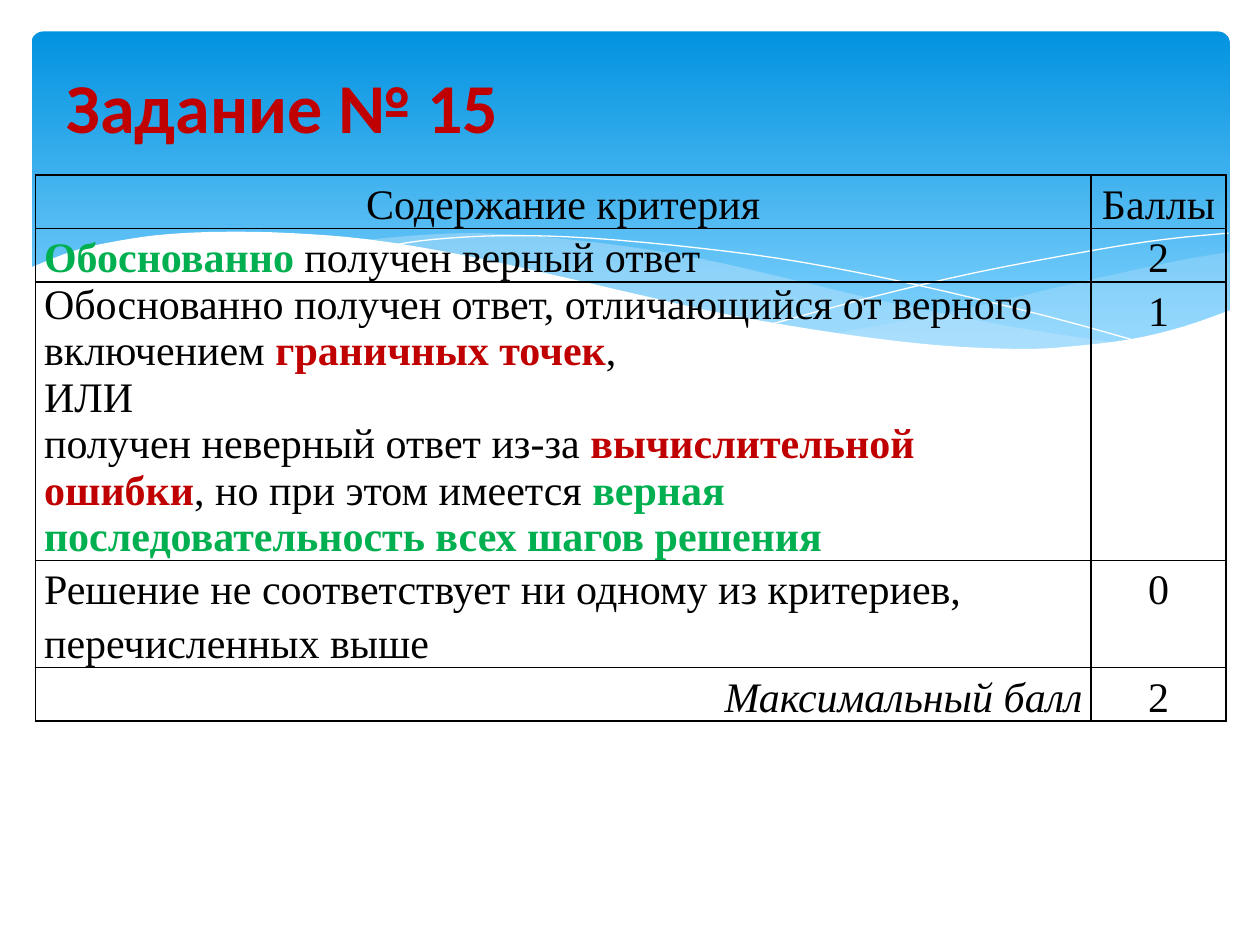
from lxml.etree import SubElement
from pptx import Presentation
from pptx.dml.color import RGBColor
from pptx.enum.shapes import MSO_SHAPE as Preset
from pptx.enum.text import MSO_ANCHOR as Anchor, PP_ALIGN as Align
from pptx.oxml.ns import qn
from pptx.util import Inches, Pt

WHITE = RGBColor(0xFF, 0xFF, 0xFF)
BLACK = RGBColor(0x00, 0x00, 0x00)
RED = RGBColor(0xC0, 0x00, 0x00)
GREEN = RGBColor(0x00, 0xB0, 0x50)
SKY_TOP = RGBColor(0x02, 0x93, 0xE0)
SKY_BOTTOM = RGBColor(0x83, 0xD3, 0xFE)
MIST = RGBColor(0xC6, 0xE7, 0xFC)

CELL = Inches(1)
COLUMNS, ROWS = 10, 7.5

PLAIN = {"size": Pt(24), "name": "Times New Roman", "bold": False, "italic": False}
RED_BOLD = {"color": RED, "bold": True}
GREEN_BOLD = {"color": GREEN, "bold": True}
ITALIC = {"italic": True}

RIGHT_VEIL = [
    [(9.76, 2), (9.35, 2.07), (8.61, 2.23), (7.53, 2.48), (6.61, 2.65)],
    [(6.61, 2.65), (7.19, 2.72), (7.69, 2.77), (8.14, 2.78), (8.63, 2.75),
     (9.05, 2.69), (9.42, 2.59), (9.76, 2.47)],
]
LONG_VEIL = [
    [(8.93, 2.73), (8.07, 2.6), (7.06, 2.4), (6.29, 2.22), (5.69, 2.08),
     (5.14, 1.98), (4.42, 1.89), (3.8, 1.85), (3.28, 1.87), (2.86, 1.91)],
    [(2.86, 1.91), (3.42, 1.99), (4.04, 2.11), (4.91, 2.32), (5.84, 2.52),
     (6.65, 2.66), (7.36, 2.75), (7.96, 2.78), (8.48, 2.77), (8.93, 2.73)],
]
FALLING_LINE = [
    [(3.09, 1.95), (3.44, 1.9), (4.01, 1.87), (4.69, 1.89), (5.56, 1.97),
     (6.36, 2.08), (7.27, 2.26), (8.31, 2.51), (9.07, 2.72)],
]
RISING_LINE = [
    [(6.13, 2.57), (6.95, 2.35), (7.76, 2.16), (8.66, 1.99), (9.24, 1.9), (9.75, 1.85)],
]
WHITE_WAVE = [
    [(9.77, 2.46), (9.4, 2.59), (8.99, 2.69), (8.5, 2.75), (8.09, 2.77),
     (7.44, 2.74), (6.68, 2.65), (5.79, 2.5), (5.03, 2.33), (4.47, 2.2),
     (3.65, 2.02), (2.92, 1.9), (2.3, 1.85), (1.77, 1.84), (1.32, 1.86),
     (0.95, 1.91), (0.59, 1.99), (0.23, 2.13)],
    [(0.23, 3.29), (9.77, 3.29)],
]

CRITERIA = [
    (0.42, 1.15, Align.CENTER, [[("Содержание критерия", {})]], "Баллы"),
    (0.42, 1.15, Align.LEFT,
     [[("Обоснованно", GREEN_BOLD), (" получен верный ответ", {})]], "2"),
    (2.21, 1, Align.LEFT,
     [[("Обоснованно получен ответ, отличающийся от верного включением ", {}),
       ("граничных точек", RED_BOLD), (",", {})],
      [("ИЛИ", {})],
      [("получен неверный ответ из-за ", {}), ("вычислительной ошибки", RED_BOLD),
       (", но при этом имеется ", {}),
       ("верная последовательность всех шагов решения", GREEN_BOLD)]], "1"),
    (0.85, 1.15, Align.LEFT,
     [[("Решение не соответствует ни одному из критериев, перечисленных выше", {})]], "0"),
    (0.42, 1.15, Align.RIGHT, [[("Максимальный балл", ITALIC)]], "2"),
]


def in_cells(*lengths):
    return [round(length * CELL) for length in lengths]


def smooth(knots, steps=4):
    ends = [knots[0], *knots, knots[-1]]
    curve = [knots[0]]
    for a, b, c, d in zip(ends, ends[1:], ends[2:], ends[3:]):
        for step in range(1, steps + 1):
            t = step / steps
            curve.append(tuple(
                (2 * q + (r - p) * t + (2 * p - 5 * q + 4 * r - s) * t ** 2
                 + (3 * q - p - 3 * r + s) * t ** 3) / 2
                for p, q, r, s in zip(a, b, c, d)))
    return curve


def add_wave(slide, edges, fill=None, alpha=None):
    outline = [in_cells(*point) for edge in edges
               for point in (smooth(edge) if len(edge) > 2 else edge)]
    builder = slide.shapes.build_freeform(*outline[0])
    builder.add_line_segments(outline[1:], close=fill is not None)
    wave = builder.convert_to_shape()
    wave.shadow.inherit = False
    if fill is None:
        wave.fill.background()
        wave.line.color.rgb = WHITE
        wave.line.width = Pt(0)
        return
    wave.fill.solid()
    wave.fill.fore_color.rgb = fill
    wave.line.fill.background()
    if alpha:
        tint = wave.fill._xPr.find(qn("a:solidFill"))[0]
        SubElement(tint, qn("a:alpha"), val=str(alpha * 1000))


def add_banner(slide, box):
    sky = slide.shapes.add_shape(Preset.ROUNDED_RECTANGLE, *in_cells(*box))
    sky.adjustments[0] = 0.034
    sky.shadow.inherit = False
    sky.line.fill.background()
    sky.fill.gradient()
    sky.fill.gradient_angle = 270
    for stop, position, color in zip(sky.fill.gradient_stops, (0, 0.9), (SKY_TOP, SKY_BOTTOM)):
        stop.position = position
        stop.color.rgb = color
    add_wave(slide, RIGHT_VEIL, MIST, 29)
    add_wave(slide, LONG_VEIL, MIST, 40)
    add_wave(slide, FALLING_LINE)
    add_wave(slide, RISING_LINE)
    add_wave(slide, WHITE_WAVE, WHITE)


def add_run(paragraph, words, formats):
    run = paragraph.add_run()
    run.text = words
    values = {"color": BLACK, **PLAIN, **formats}
    run.font.color.rgb = values.pop("color")
    for attribute, value in values.items():
        setattr(run.font, attribute, value)


def add_title(slide, box):
    title = slide.shapes.title
    title.left, title.top, title.width, title.height = in_cells(*box)
    title.text_frame.vertical_anchor = Anchor.MIDDLE
    heading = title.text_frame.paragraphs[0]
    heading.alignment = Align.LEFT
    add_run(heading, "Задание № 15",
            {"size": Pt(40), "name": "Calibri", "color": RED, "bold": True})
    slide.shapes._spTree.append(title._element)


def fill_cell(cell, paragraphs, alignment, spacing):
    margins = {"margin_left": 0.07, "margin_right": 0.07, "margin_top": 0, "margin_bottom": 0}
    for side, margin in margins.items():
        setattr(cell, side, Inches(margin))
    properties = cell._tc.get_or_add_tcPr()
    for edge in ("lnL", "lnR", "lnT", "lnB"):
        border = SubElement(properties, qn(f"a:{edge}"), w=str(Pt(1)))
        SubElement(SubElement(border, qn("a:solidFill")), qn("a:srgbClr"), val=str(BLACK))
    cell.fill.background()
    frame = cell.text_frame
    for index, runs in enumerate(paragraphs):
        paragraph = frame.add_paragraph() if index else frame.paragraphs[0]
        paragraph.alignment = alignment
        paragraph.line_spacing = spacing
        for words, formats in runs:
            add_run(paragraph, words, formats)


def add_criteria(slide, box):
    left, top, width = box
    score_width = 1.07
    height = sum(row[0] for row in CRITERIA)
    table = slide.shapes.add_table(
        len(CRITERIA), 2, *in_cells(left, top, width, height)).table
    table.first_row = table.horz_banding = False
    for column, share in zip(table.columns, (width - score_width, score_width)):
        column.width = Inches(share)
    for index, (row_height, spacing, alignment, criterion, score) in enumerate(CRITERIA):
        table.rows[index].height = Inches(row_height)
        fill_cell(table.cell(index, 0), criterion, alignment, spacing)
        fill_cell(table.cell(index, 1), [[(score, {})]], Align.CENTER, 1.15)


def main():
    deck = Presentation()
    deck.slide_width, deck.slide_height = in_cells(COLUMNS, ROWS)
    slide = deck.slides.add_slide(deck.slide_layouts[5])
    add_banner(slide, (0.25, 0.25, 9.51, 2.7))
    add_title(slide, (0.43, 0.21, 9, 1.25))
    add_criteria(slide, (0.28, 1.39, 9.45))
    deck.save("out.pptx")


if __name__ == "__main__":
    main()
